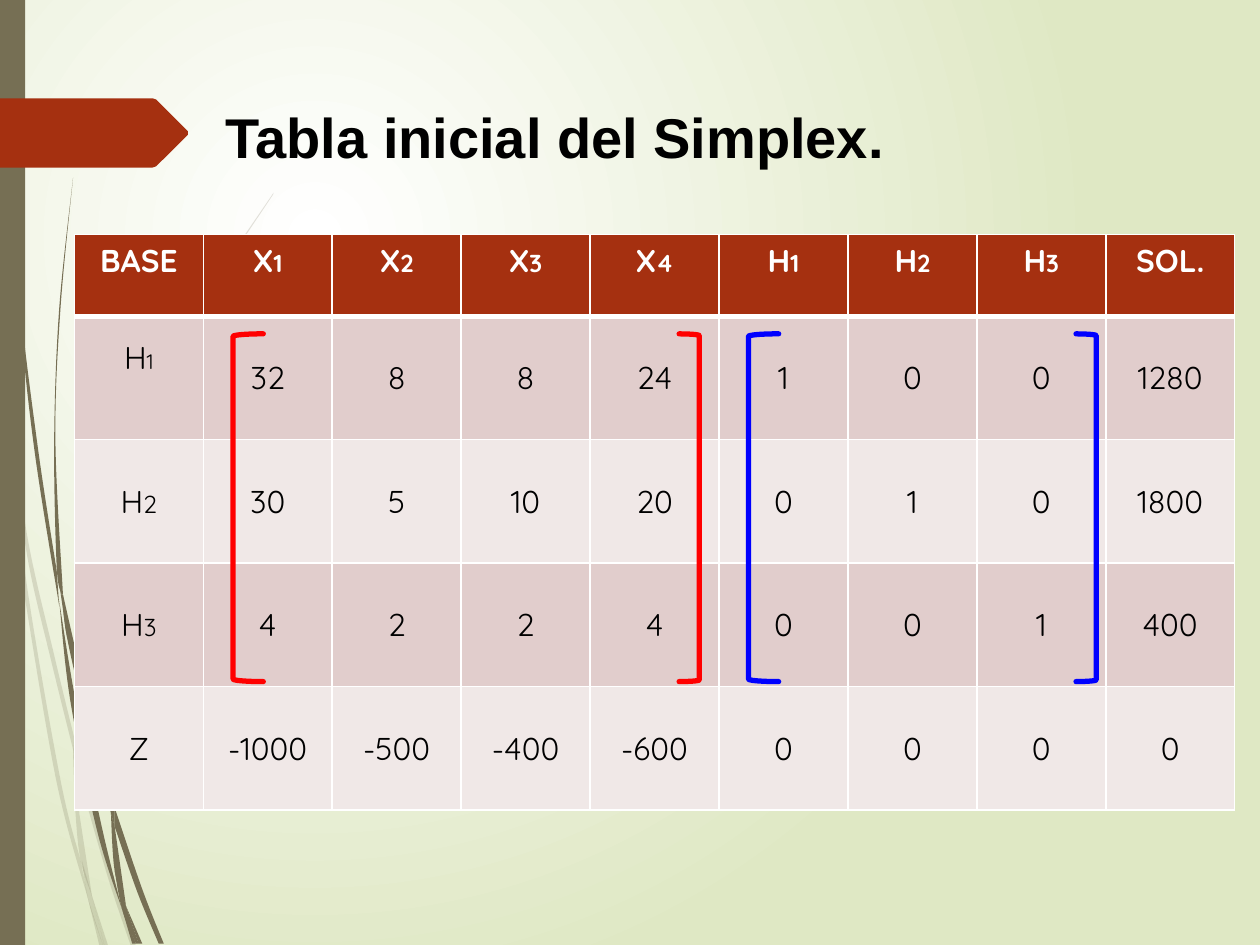
from lxml import etree
from pptx import Presentation
from pptx.dml.color import RGBColor
from pptx.enum.shapes import MSO_SHAPE
from pptx.enum.text import MSO_ANCHOR, PP_ALIGN
from pptx.oxml.ns import qn
from pptx.util import Inches, Pt

LEFT_BRACKET, RIGHT_BRACKET = MSO_SHAPE.LEFT_BRACKET, MSO_SHAPE.RIGHT_BRACKET
RECTANGLE = MSO_SHAPE.RECTANGLE
TOP, MIDDLE = MSO_ANCHOR.TOP, MSO_ANCHOR.MIDDLE
CENTER, LEFT = PP_ALIGN.CENTER, PP_ALIGN.LEFT

THEME = {
    "white": "FFFFFF", "black": "000000", "background": "DFE8C4",
    "olive": "766F54", "rust": "A53010",
    "bands": ("E1CDCC", "F0E8E7"), "red": "FF0000", "blue": "0000FF",
    "title_font": "Arial", "table_font": "Quicksand",
    "title_size": 32, "cell_size": 18, "index_size": 14, "small_index_size": 12,
}

TITLE = "Tabla inicial del Simplex."
HEADER = ["BASE", ("X", "1"), ("X", "2"), ("X", "3"), ("X", "4"),
          ("H", "1"), ("H", "2"), ("H", "3"), "SOL."]
BODY = [
    [("H", "1"), "32", "8", "8", "24", "1", "0", "0", "1280"],
    [("H", "2"), "30", "5", "10", "20", "0", "1", "0", "1800"],
    [("H", "3"), "4", "2", "2", "4", "0", "0", "1", "400"],
    ["Z", "-1000", "-500", "-400", "-600", "0", "0", "0", "0"],
]
RAISED_CELL = (1, 0)
TABLE_LEFT, TABLE_TOP, TABLE_WIDTH = 0.59, 1.86, 9.21
HEADER_HEIGHT, BODY_HEIGHT = 0.65, 0.98

BRACKETS = [  # shape, left, width, colour
    (LEFT_BRACKET, 1.85, 0.24, "red"), (RIGHT_BRACKET, 5.39, 0.16, "red"),
    (LEFT_BRACKET, 5.94, 0.24, "blue"), (RIGHT_BRACKET, 8.54, 0.16, "blue"),
]

# Each blade of grass is two edges, one down and one back, curved separately.
FAINT_BLADES = [
    ([(0.08, 3.5), (0.06, 3.22), (0, 2.82)], [(0, 2.99), (0.07, 3.44)]),
    ([(0.1, 3.45), (0.23, 4.33), (0.43, 5.2), (0.59, 5.86)],
     [(0.59, 5.99), (0.4, 5.22), (0.23, 4.49), (0.12, 3.76)]),
    ([(0.61, 5.96), (0.88, 6.92), (1.08, 7.51)],
     [(1.04, 7.51), (0.85, 6.94), (0.61, 6.1)]),
    ([(0.73, 7.11), (0.86, 7.51)], [(0.83, 7.51)]),
    ([(0.08, 3.5), (0.22, 4.69), (0.48, 6.19), (0.64, 6.83)],
     [(0.7, 7.14), (0.45, 6.21), (0.19, 4.7)]),
    ([(0.58, 5.99), (0.6, 6.46), (0.64, 6.83), (0.73, 7.11)],
     [(0.63, 6.46), (0.61, 6.08)]),
    ([(0.61, 5.96), (0.61, 5.84), (0.76, 4.62), (1.11, 3.49), (1.59, 2.45),
      (2.17, 1.54)],
     [(2.17, 1.53), (1.58, 2.44), (1.1, 3.48), (0.75, 4.61), (0.59, 5.86)]),
    ([(0.7, 7.14), (0.79, 7.51)], [(0.82, 7.51)]),
    ([(0.61, 6.1), (0.61, 5.96)], [(0.59, 5.86), (0.58, 5.99)]),
    ([(0.65, 6.83), (0.7, 7.14), (0.82, 7.51)], [(0.83, 7.51), (0.73, 7.11)]),
]
SOLID_BLADES = [
    ([(0.02, 0), (0.05, 1.1), (0.14, 2.33), (0.27, 3.55), (0.47, 4.81)],
     [(0.45, 4.53), (0.3, 3.55), (0.15, 2.32), (0.06, 1.09), (0.03, 0)]),
    ([(0.5, 4.72), (0.53, 5.05), (0.73, 5.92), (0.88, 6.45)],
     [(0.88, 6.31), (0.77, 5.9), (0.5, 4.72)]),
    ([(0.91, 6.41), (1.13, 7.06), (1.3, 7.49)],
     [(1.26, 7.49), (1.09, 7.08), (0.91, 6.56)]),
    ([(0.47, 4.77), (0.6, 5.56), (0.81, 6.57), (0.97, 7.22)],
     [(0.97, 7.22), (0.77, 6.59), (0.56, 5.57), (0.47, 4.77)]),
    ([(0.58, 1.41), (0.48, 2.45), (0.44, 3.49), (0.5, 4.72)],
     [(0.49, 4.72), (0.45, 4.49), (0.43, 3.49), (0.47, 2.45), (0.58, 1.41)]),
    ([(1, 7.19), (1.13, 7.49)], [(1.1, 7.49)]),
    ([(0.45, 4.49), (0.53, 5.05)], [(0.5, 4.72), (0.49, 4.72)]),
    ([(0.91, 6.41), (1.03, 5.52), (1.31, 4.76), (1.69, 4.06), (2.16, 3.44)],
     [(2.15, 3.44), (1.68, 4.05), (1.29, 4.74), (1.01, 5.51), (0.88, 6.31)]),
    ([(0.97, 7.22), (1.08, 7.49)], [(1.05, 7.49)]),
    ([(0.88, 6.45), (0.91, 6.91), (1, 7.19)], [(0.91, 6.56)]),
    ([(0.88, 6.45), (0.91, 6.56)], [(0.91, 6.41), (0.88, 6.31)]),
    ([(0.91, 6.91), (0.97, 7.22), (1.08, 7.49)], [(1.1, 7.49), (1, 7.19)]),
]
TITLE_ARROW = [(0, 0.78), (1.21, 0.78), (1.24, 0.79), (1.49, 1.04),
               (1.49, 1.07), (1.24, 1.32), (1.21, 1.33), (0, 1.33)]


def rgb(name):
    return RGBColor.from_string(THEME.get(name, name))


def paint(shape, color, opacity=100):
    shape.shadow.inherit = False
    shape.fill.solid()
    shape.fill.fore_color.rgb = rgb(color)
    shape.line.fill.background()
    if opacity < 100:
        tint = shape.element.spPr.find(f".//{qn('a:srgbClr')}")
        etree.SubElement(tint, qn("a:alpha"), val=str(opacity * 1000))


def add_outline(shapes, points, color, opacity=100):
    corners = [(Inches(x), Inches(y)) for x, y in points]
    builder = shapes.build_freeform(*corners[0], scale=1.0)
    builder.add_line_segments(corners[1:], close=True)
    shape = builder.convert_to_shape()
    paint(shape, color, opacity)
    return shape


def edge_curves(edge):
    """Yield both control points and the end of each Catmull-Rom segment."""
    padded = [edge[0], *edge, edge[-1]]
    for a, b, c, d in zip(padded, padded[1:], padded[2:], padded[3:]):
        yield (tuple(q + (r - p) / 6 for p, q, r in zip(a, b, c)),
               tuple(r - (s - q) / 6 for q, r, s in zip(b, c, d)), c)


def add_blade(shapes, edges, opacity):
    """Draw straight segments, then bend those that lie within an edge."""
    down, back = edges
    blade = add_outline(shapes, down + back, "olive", opacity)
    segments = blade.element.findall(f".//{qn('a:lnTo')}")
    for edge, first in ((down, 0), (back, len(down))):
        for segment, points in zip(segments[first:], edge_curves(edge)):
            curve = etree.Element(qn("a:cubicBezTo"))
            for x, y in points:
                etree.SubElement(curve, qn("a:pt"), x=str(Inches(x) - blade.left),
                                 y=str(Inches(y) - blade.top))
            segment.getparent().replace(segment, curve)


def set_background(page):
    fill = page.background.fill
    fill.gradient()
    for stop, color, position in zip(fill.gradient_stops, ("white", "background"), (0, 1)):
        stop.color.rgb = rgb(color)
        stop.position = position
    linear = page.element.find(f".//{qn('a:lin')}")
    radial = etree.Element(qn("a:path"), {"path": "circle"})
    etree.SubElement(radial, qn("a:fillToRect"), l="50000", t="50000", r="100000", b="100000")
    linear.getparent().replace(linear, radial)


def add_span(para, text, size, color, font, bold):
    span = para.add_run()
    span.text = text
    span.font.size, span.font.name, span.font.bold = Pt(size), font, bold
    span.font.color.rgb = rgb(color)


def set_borders(cell, bottom):
    for side, width in (("L", 1), ("R", 1), ("T", 1), ("B", bottom)):
        line = etree.SubElement(cell._tc.get_or_add_tcPr(), qn(f"a:ln{side}"),
                                w=str(Pt(width)))
        fill = etree.SubElement(line, qn("a:solidFill"))
        etree.SubElement(fill, qn("a:srgbClr"), val=THEME["white"])


def fill_cell(cell, content, row, column):
    header, raised = row == 0, (row, column) == RAISED_CELL
    set_borders(cell, 3 if header else 1)
    cell.fill.solid()
    cell.fill.fore_color.rgb = rgb("rust" if header else THEME["bands"][(row - 1) % 2])
    cell.vertical_anchor = TOP if header else MIDDLE
    if raised:
        cell.margin_bottom = Inches(0.37)
    para = cell.text_frame.paragraphs[0]
    para.alignment = CENTER
    parts = (content,) if isinstance(content, str) else content
    index_size = THEME["small_index_size" if raised else "index_size"]
    for text, size in zip(parts, (THEME["cell_size"], index_size)):
        add_span(para, text, size, "white" if header else "black",
                 THEME["table_font"], header)


def add_simplex_table(page):
    rows = [HEADER, *BODY]
    heights = [HEADER_HEIGHT] + [BODY_HEIGHT] * len(BODY)
    table = page.shapes.add_table(
        len(rows), len(HEADER), Inches(TABLE_LEFT), Inches(TABLE_TOP),
        Inches(TABLE_WIDTH), Inches(sum(heights))).table
    for row, (contents, height) in enumerate(zip(rows, heights)):
        table.rows[row].height = Inches(height)
        for column, content in enumerate(contents):
            fill_cell(table.cell(row, column), content, row, column)


def add_bracket(page, kind, left, width, color):
    bracket = page.shapes.add_shape(kind, Inches(left), Inches(2.65),
                                    Inches(width), Inches(2.76))
    bracket.shadow.inherit = False
    bracket.fill.background()
    bracket.line.color.rgb = rgb(color)
    bracket.line.width = Pt(3)
    bracket.element.spPr.find(qn("a:ln")).set("cap", "rnd")


def set_title(title):
    title.left, title.top, title.width, title.height = map(Inches, (1.69, 0.76, 5.48, 0.64))
    title.text_frame.word_wrap = False
    title.text_frame.vertical_anchor = TOP
    para = title.text_frame.paragraphs[0]
    para.alignment = LEFT
    add_span(para, TITLE, THEME["title_size"], "black", THEME["title_font"], True)


def main():
    deck = Presentation()
    deck.slide_width, deck.slide_height = Inches(10), Inches(7.5)
    page = deck.slides.add_slide(deck.slide_layouts[5])
    set_background(page)
    for blades, opacity in ((FAINT_BLADES, 20), (SOLID_BLADES, 100)):
        group = page.shapes.add_group_shape()
        for edges in blades:
            add_blade(group.shapes, edges, opacity)
    side_bar = page.shapes.add_shape(RECTANGLE, 0, 0, Inches(0.2), deck.slide_height)
    paint(side_bar, "olive")
    add_outline(page.shapes, TITLE_ARROW, "rust")
    add_simplex_table(page)
    set_title(page.shapes.title)
    for bracket in BRACKETS:
        add_bracket(page, *bracket)
    deck.save("out.pptx")


if __name__ == "__main__":
    main()
